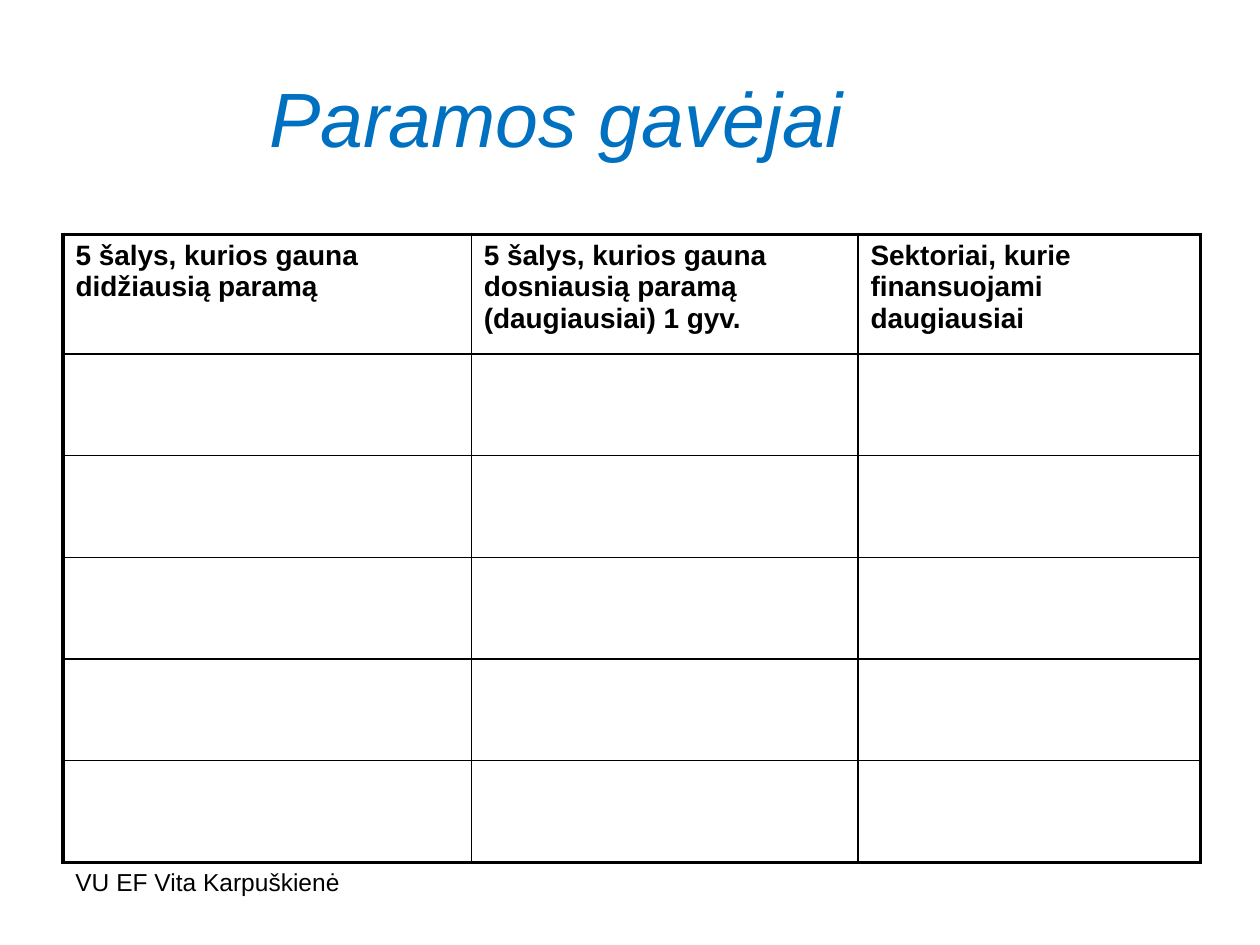
"""Build the slide on aid recipients with its empty table."""
from lxml import etree
from pptx import Presentation
from pptx.dml.color import RGBColor
from pptx.enum import text as t
from pptx.oxml import ns
from pptx.util import Pt


def style(para, hue, **vals):
    font = para.runs[0].font
    font.color.rgb = RGBColor.from_string(hue)
    for key, val in {"name": "Arial", **vals}.items():
        setattr(font, key, val)


def edge(cell, sides):
    props = cell._tc.get_or_add_tcPr()
    for spot, (side, wide) in enumerate(sides.items()):
        line = etree.Element(ns.qn(f"a:ln{side}"), w=str(Pt(wide)))
        fill = etree.SubElement(line, ns.qn("a:solidFill"))
        etree.SubElement(fill, ns.qn("a:srgbClr"), val="000000")
        props.insert(spot, line)


deck = Presentation()
deck.slide_width, deck.slide_height = Pt(720), Pt(540)
slide = deck.slides.add_slide(deck.slide_layouts[5])

title = slide.shapes.title
place = {"left": 0, "top": 21.6, "width": 648, "height": 90}
for key, val in place.items():
    setattr(title, key, Pt(val))
title.text_frame.text = "Paramos gavėjai "
title.text_frame.vertical_anchor = t.MSO_ANCHOR.MIDDLE
para = title.text_frame.paragraphs[0]
para.alignment = t.PP_ALIGN.CENTER
style(para, "0070C0", size=Pt(44), italic=True)

foot = slide.shapes.add_textbox(Pt(36), Pt(491.8), Pt(168), Pt(37.4))
foot.text_frame.word_wrap = True
foot.text_frame.text = "VU EF Vita Karpuškienė"
style(foot.text_frame.paragraphs[0], "000000", size=Pt(14))

heads = [
    "5 šalys, kurios gauna didžiausią paramą",
    "5 šalys, kurios gauna dosniausią paramą (daugiausiai) 1 gyv.",
    "Sektoriai, kurie finansuojami daugiausiai",
]
wides = [233.3, 221, 195.8]
highs = [68.4] + [58.1] * 5
frame = slide.shapes.add_table(
    len(highs), len(wides), Pt(36), Pt(133.9), Pt(sum(wides)), Pt(sum(highs))
)
table = frame.table
table.first_row = table.horz_banding = False
for col, wide in zip(table.columns, wides):
    col.width = Pt(wide)

thick, thin = 2.25, 1
for r, high in enumerate(highs):
    table.rows[r].height = Pt(high)
    for c, head in enumerate(heads):
        cell = table.cell(r, c)
        cell.fill.background()
        outer = {
            "L": c == 0,
            "R": c == len(wides) - 1,
            "T": r == 0,
            "B": r == len(highs) - 1,
        }
        edge(cell, {side: thick if out else thin for side, out in outer.items()})
        if r == 0:
            cell.text = head
            style(cell.text_frame.paragraphs[0], "000000", size=Pt(16), bold=True)

deck.save("out.pptx")
